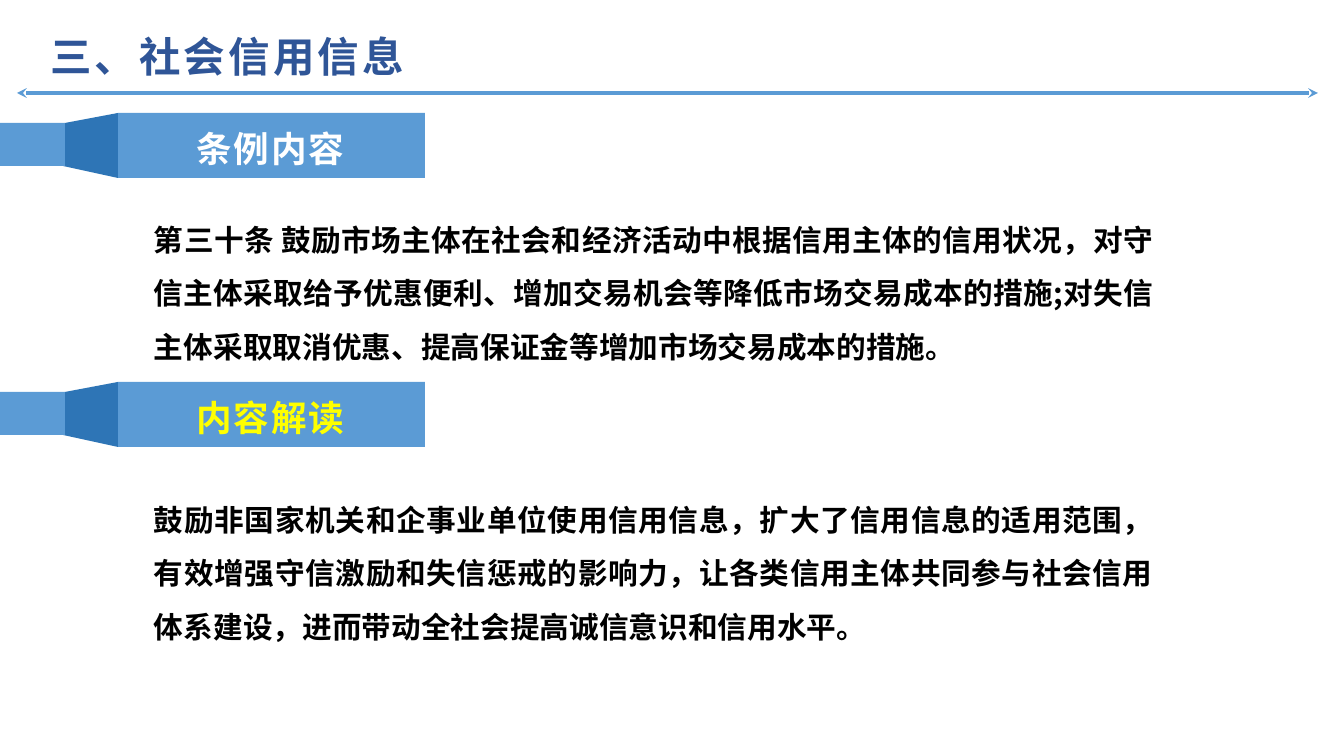
from lxml import etree
from pptx import Presentation
from pptx.dml.color import RGBColor
from pptx.enum import shapes, text
from pptx.oxml import ns
from pptx.util import Pt

PX = 8572.5  # EMU per px
FONT = "Noto Sans CJK SC"
NAVY = RGBColor(0x2F, 0x55, 0x97)
BLUE = RGBColor(0x5B, 0x9B, 0xD5)
DARK_BLUE = RGBColor(0x2E, 0x75, 0xB6)
WHITE = RGBColor(0xFF, 0xFF, 0xFF)
YELLOW = RGBColor(0xFF, 0xFF, 0x00)
BLACK = RGBColor(0x00, 0x00, 0x00)


def px(*lengths):
    return [round(length * PX) for length in lengths]


class SlideBuilder:
    def __init__(self, slide):
        self.slide = slide

    def fill_text(self, shape, words, size, color, align, spacing=0, insets=(11, 5)):
        frame = shape.text_frame
        horizontal, vertical = px(*insets)
        frame_format = {
            "word_wrap": True,
            "auto_size": text.MSO_AUTO_SIZE.SHAPE_TO_FIT_TEXT,
            "vertical_anchor": text.MSO_ANCHOR.TOP,
            "margin_left": horizontal, "margin_right": horizontal,
            "margin_top": vertical, "margin_bottom": vertical,
        }
        for name, value in frame_format.items():
            setattr(frame, name, value)

        paragraph = frame.paragraphs[0]
        paragraph_format = {"alignment": align, "line_spacing": 1.5,
                            "space_before": Pt(0), "space_after": Pt(0)}
        for name, value in paragraph_format.items():
            setattr(paragraph, name, value)

        run = paragraph.add_run()
        run.text = words
        font_format = {"name": FONT, "size": Pt(size), "bold": True}
        for name, value in font_format.items():
            setattr(run.font, name, value)
        run.font.color.rgb = color
        properties = run._r.get_or_add_rPr()
        properties.set("spc", str(round(spacing * 100)))
        etree.SubElement(properties, ns.qn("a:ea")).set("typeface", FONT)
        return paragraph

    def place(self, placeholder, box):
        for name, value in zip(("left", "top", "width", "height"), px(*box)):
            setattr(placeholder, name, value)
        return placeholder

    def title(self, words, box):
        self.fill_text(self.place(self.slide.shapes.title, box), words, 28, NAVY,
                       text.PP_ALIGN.LEFT, spacing=2.2, insets=(5, 3))

    def body(self, index, words, box):
        placeholder = self.place(self.slide.placeholders[index], box)
        paragraph = self.fill_text(placeholder, words, 20, BLACK, text.PP_ALIGN.JUSTIFY)
        properties = paragraph._p.get_or_add_pPr()
        for name in ("marL", "indent"):
            properties.set(name, "0")
        etree.SubElement(properties, ns.qn("a:buNone"))

    def double_arrow(self, left, right, y):
        connector = self.slide.shapes.add_connector(
            shapes.MSO_CONNECTOR.STRAIGHT, *px(left, y, right, y))
        connector.line.color.rgb = BLUE
        connector.line.width = Pt(2.25)
        properties = connector._element.spPr
        for end in ("a:headEnd", "a:tailEnd"):
            etree.SubElement(properties.get_or_add_ln(), ns.qn(end)).set("type", "stealth")
        etree.SubElement(properties, ns.qn("a:effectLst"))

    def paint(self, shape, color):
        shape.shadow.inherit = False
        shape.fill.solid()
        shape.fill.fore_color.rgb = color
        shape.line.fill.background()

    def rectangle(self, parent, box):
        self.paint(parent.add_shape(shapes.MSO_SHAPE.RECTANGLE, *px(*box)), BLUE)

    def banner(self, words, top, color):
        parent = self.slide.shapes.add_group_shape().shapes
        self.rectangle(parent, (118, top, 307, 65))
        fold = parent.build_freeform(63, top + 53, scale=PX)
        fold.add_line_segments([(65, top + 10), (118, top), (118, top + 65)])
        self.paint(fold.convert_to_shape(), DARK_BLUE)
        self.rectangle(parent, (0, top + 10, 65, 43))
        label = parent.add_textbox(*px(180, top - 12, 181, 76))
        self.fill_text(label, words, 24, color, text.PP_ALIGN.CENTER, spacing=1.2)


def main():
    presentation = Presentation()
    presentation.slide_width, presentation.slide_height = px(1344, 756)
    two_content = presentation.slide_layouts[3]
    builder = SlideBuilder(presentation.slides.add_slide(two_content))

    # Heading
    builder.title("三、社会信用信息", (45, 3, 1246, 81))
    builder.double_arrow(17, 1318, 93)

    # Regulation text
    builder.banner("条例内容", 113, WHITE)
    builder.body(1, "第三十条 鼓励市场主体在社会和经济活动中根据信用主体的信用状况，"
                 "对守信主体采取给予优惠便利、增加交易机会等降低市场交易成本的措施;"
                 "对失信主体采取取消优惠、提高保证金等增加市场交易成本的措施。",
                 (143, 199, 1021, 172))

    # Interpretation
    builder.banner("内容解读", 382, YELLOW)
    builder.body(2, "鼓励非国家机关和企事业单位使用信用信息，扩大了信用信息的适用范围，"
                 "有效增强守信激励和失信惩戒的影响力，让各类信用主体共同参与社会信用体系建设，"
                 "进而带动全社会提高诚信意识和信用水平。",
                 (143, 479, 1021, 172))

    presentation.save("out.pptx")


if __name__ == "__main__":
    main()
